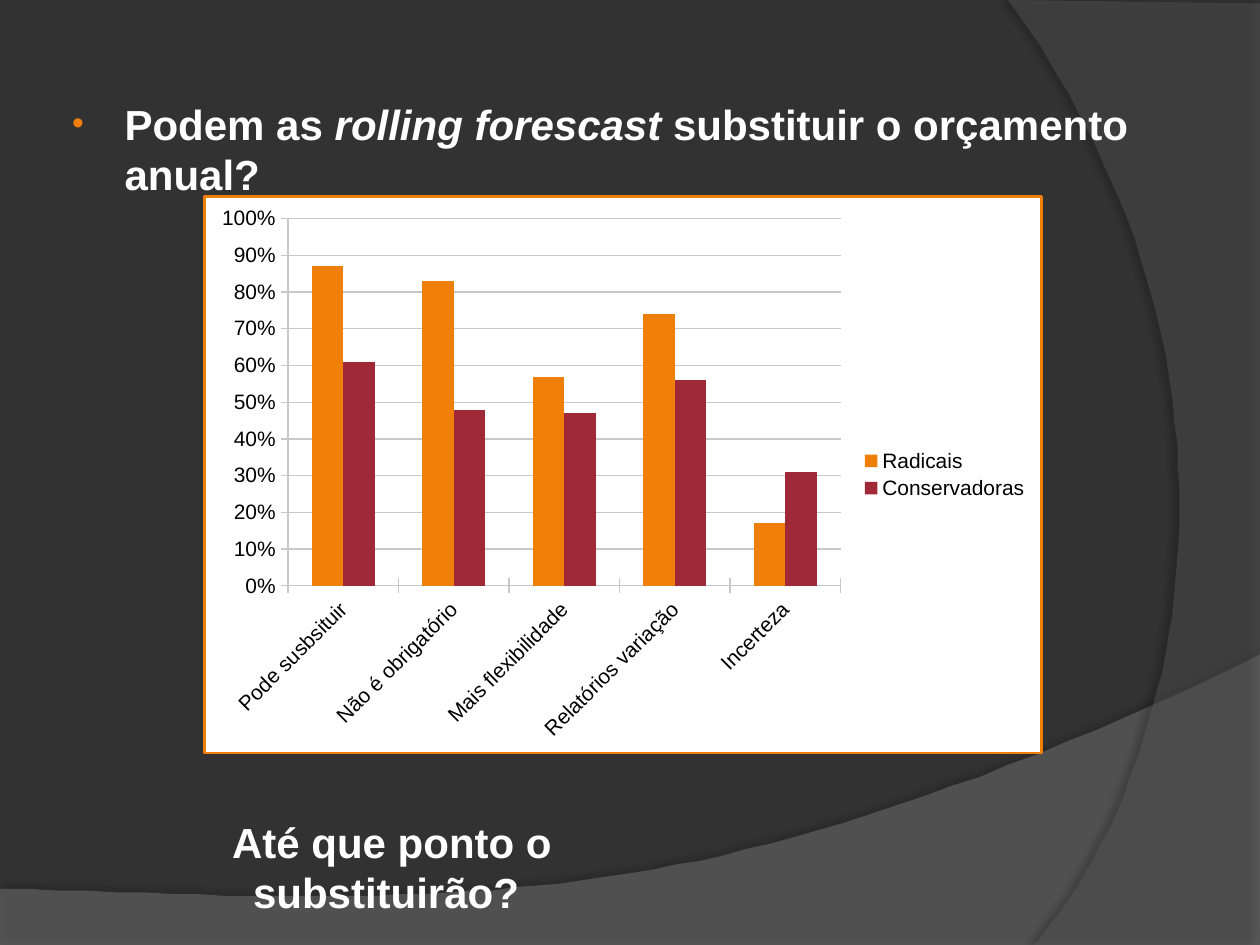
from dataclasses import dataclass

from lxml.etree import SubElement
from pptx import Presentation
from pptx.chart.data import CategoryChartData
from pptx.dml.color import RGBColor
from pptx.enum.chart import XL_CHART_TYPE as ChartType
from pptx.enum.chart import XL_LEGEND_POSITION as LegendPosition
from pptx.enum.chart import XL_TICK_MARK as TickMark
from pptx.enum.text import MSO_ANCHOR, MSO_AUTO_SIZE, PP_ALIGN
from pptx.oxml import parse_xml
from pptx.oxml.ns import nsdecls, qn
from pptx.util import Pt

FONT = "Arial"
WHITE, BLACK, ORANGE, RED, GRID = "FFFFFF", "000000", "F07F09", "9F2936", "C8C8C8"
Point = tuple[float, float]


@dataclass
class Wave:
    outline: list[Point]
    color: str
    opacity: int
    shadow_opacity: int
    shadow_distance: float
    shadow_angle: int


@dataclass
class Series:
    name: str
    values: list[float]
    color: str


def rgb(color: str) -> RGBColor:
    return RGBColor.from_string(color)


def curve(start: Point, control1: Point, control2: Point, end: Point, steps: int = 48) -> list[Point]:
    """Points along a cubic Bezier curve, both ends included."""
    points = []
    for step in range(steps + 1):
        t = step / steps
        weights = ((1 - t) ** 3, 3 * t * (1 - t) ** 2, 3 * t**2 * (1 - t), t**3)
        points.append(tuple(
            sum(w * p[axis] for w, p in zip(weights, (start, control1, control2, end)))
            for axis in (0, 1)
        ))
    return points


def draw_wave(shapes, wave: Wave) -> None:
    builder = shapes.build_freeform(*wave.outline[0], scale=Pt(1))
    builder.add_line_segments(wave.outline[1:], close=True)
    shape = builder.convert_to_shape()
    shape.fill.solid()
    shape.fill.fore_color.rgb = rgb(wave.color)
    shape.line.fill.background()
    properties = shape._element.spPr
    fill_color = properties.find(qn("a:solidFill"))[0]
    SubElement(fill_color, qn("a:alpha"), val=str(wave.opacity * 1000))
    properties.append(parse_xml(
        f'<a:effectLst {nsdecls("a")}><a:outerShdw blurRad="{Pt(4)}" '
        f'dist="{Pt(wave.shadow_distance)}" dir="{wave.shadow_angle * 60000}" '
        f'algn="ctr" rotWithShape="0"><a:srgbClr val="{BLACK}">'
        f'<a:alpha val="{wave.shadow_opacity * 1000}"/></a:srgbClr></a:outerShdw></a:effectLst>'
    ))


def add_run(paragraph, text: str, italic: bool = False) -> None:
    run = paragraph.add_run()
    run.text = text
    font = run.font
    font.name, font.size, font.bold, font.italic = FONT, Pt(24), True, italic
    font.color.rgb = rgb(WHITE)


def fill_question(body) -> None:
    body.left, body.top, body.width, body.height = Pt(31), Pt(52.5), Pt(648), Pt(81.5)
    frame = body.text_frame
    frame.auto_size = MSO_AUTO_SIZE.NONE
    frame.vertical_anchor = MSO_ANCHOR.TOP
    paragraph = frame.paragraphs[0]
    properties = paragraph._p.get_or_add_pPr()
    properties.set("marL", str(Pt(33)))
    properties.set("indent", str(Pt(-30)))
    for bullet in (
        f'<a:buClr {nsdecls("a")}><a:srgbClr val="{ORANGE}"/></a:buClr>',
        f'<a:buSzPct {nsdecls("a")} val="80000"/>',
        f'<a:buFont {nsdecls("a")} typeface="{FONT}"/>',
        f'<a:buChar {nsdecls("a")} char="•"/>',
    ):
        properties.append(parse_xml(bullet))
    add_run(paragraph, "Podem as ")
    add_run(paragraph, "rolling forescast ", italic=True)
    add_run(paragraph, "substituir o orçamento anual?")


def add_survey_chart(shapes, categories: list[str], survey: list[Series]) -> None:
    data = CategoryChartData(number_format="0%")
    data.categories = categories
    for series in survey:
        data.add_series(series.name, series.values)
    chart = shapes.add_chart(
        ChartType.COLUMN_CLUSTERED, Pt(116), Pt(111.5), Pt(480), Pt(319.5), data
    ).chart
    chart.has_title = False
    chart.font.name, chart.font.size = FONT, Pt(12)
    chart.font.color.rgb = rgb(BLACK)
    chart.has_legend = True
    chart.legend.position = LegendPosition.RIGHT
    chart.legend.include_in_layout = False

    plot = chart.plots[0]
    plot.gap_width, plot.overlap, plot.vary_by_categories = 150, 0, False
    for drawn, series in zip(plot.series, survey):
        drawn.format.fill.solid()
        drawn.format.fill.fore_color.rgb = rgb(series.color)

    value_axis, category_axis = chart.value_axis, chart.category_axis
    value_axis.minimum_scale, value_axis.maximum_scale, value_axis.major_unit = 0, 1, 0.1
    value_axis.has_major_gridlines = True
    value_axis.tick_labels.number_format = "0%"
    value_axis.tick_labels.number_format_is_linked = False
    for axis in (value_axis, category_axis):
        axis.major_tick_mark = TickMark.CROSS
        axis.format.line.color.rgb = rgb(GRID)
    value_axis.major_gridlines.format.line.color.rgb = rgb(GRID)
    category_axis.tick_labels.font.size = Pt(12)
    category_axis._element.txPr.bodyPr.set("rot", str(-45 * 60000))

    chart_space = chart._chartSpace
    chart_space.find(qn("c:txPr")).addprevious(parse_xml(
        f'<c:spPr {nsdecls("c", "a")}><a:solidFill><a:srgbClr val="{WHITE}"/></a:solidFill>'
        f'<a:ln w="{Pt(1.5)}"><a:solidFill><a:srgbClr val="{ORANGE}"/></a:solidFill></a:ln></c:spPr>'
    ))
    plot_area = chart_space.chart.plotArea
    for layout in plot_area.findall(qn("c:layout")):
        plot_area.remove(layout)
    plot_area.insert(0, parse_xml(
        f'<c:layout {nsdecls("c")}><c:manualLayout><c:layoutTarget val="inner"/>'
        '<c:xMode val="edge"/><c:yMode val="edge"/><c:x val="0.1"/><c:y val="0.04"/>'
        '<c:w val="0.66"/><c:h val="0.66"/></c:manualLayout></c:layout>'
    ))


def add_closing_question(shapes) -> None:
    frame = shapes.add_textbox(Pt(54), Pt(463), Pt(340), Pt(36)).text_frame
    frame.word_wrap = True
    frame.auto_size = MSO_AUTO_SIZE.SHAPE_TO_FIT_TEXT
    frame.paragraphs[0].alignment = PP_ALIGN.CENTER
    add_run(frame.paragraphs[0], "Até que ponto o substituirão? ")


WAVES = [
    Wave([(0, 540), (720, 540)] + curve((720, 374.5), (402.5, 525), (281.5, 517.5), (0, 507.5)),
         "7F7F7F", 45, 35, 3.5, 270),
    Wave([(720, 1.5), (720, 540)] + curve((591, 540), (673, 445.5), (733, 216), (576, 0)),
         "5E5E5E", 40, 45, 4, 180),
]
CATEGORIES = ["Pode susbsituir", "Não é obrigatório", "Mais flexibilidade",
              "Relatórios variação", "Incerteza"]
SURVEY = [
    Series("Radicais", [0.87, 0.83, 0.57, 0.74, 0.17], ORANGE),
    Series("Conservadoras", [0.61, 0.48, 0.47, 0.56, 0.31], RED),
]


def main() -> None:
    presentation = Presentation()
    presentation.slide_width, presentation.slide_height = Pt(720), Pt(540)
    slide = presentation.slides.add_slide(presentation.slide_layouts[1])
    slide.background.fill.solid()
    slide.background.fill.fore_color.rgb = rgb("323232")
    shapes = slide.shapes
    title, body = shapes.title, slide.placeholders[1]
    shapes._spTree.remove(title._element)
    for wave in WAVES:
        draw_wave(shapes, wave)
    shapes._spTree.append(body._element)  # in front of the waves
    fill_question(body)
    add_survey_chart(shapes, CATEGORIES, SURVEY)
    add_closing_question(shapes)
    presentation.save("out.pptx")


if __name__ == "__main__":
    main()
